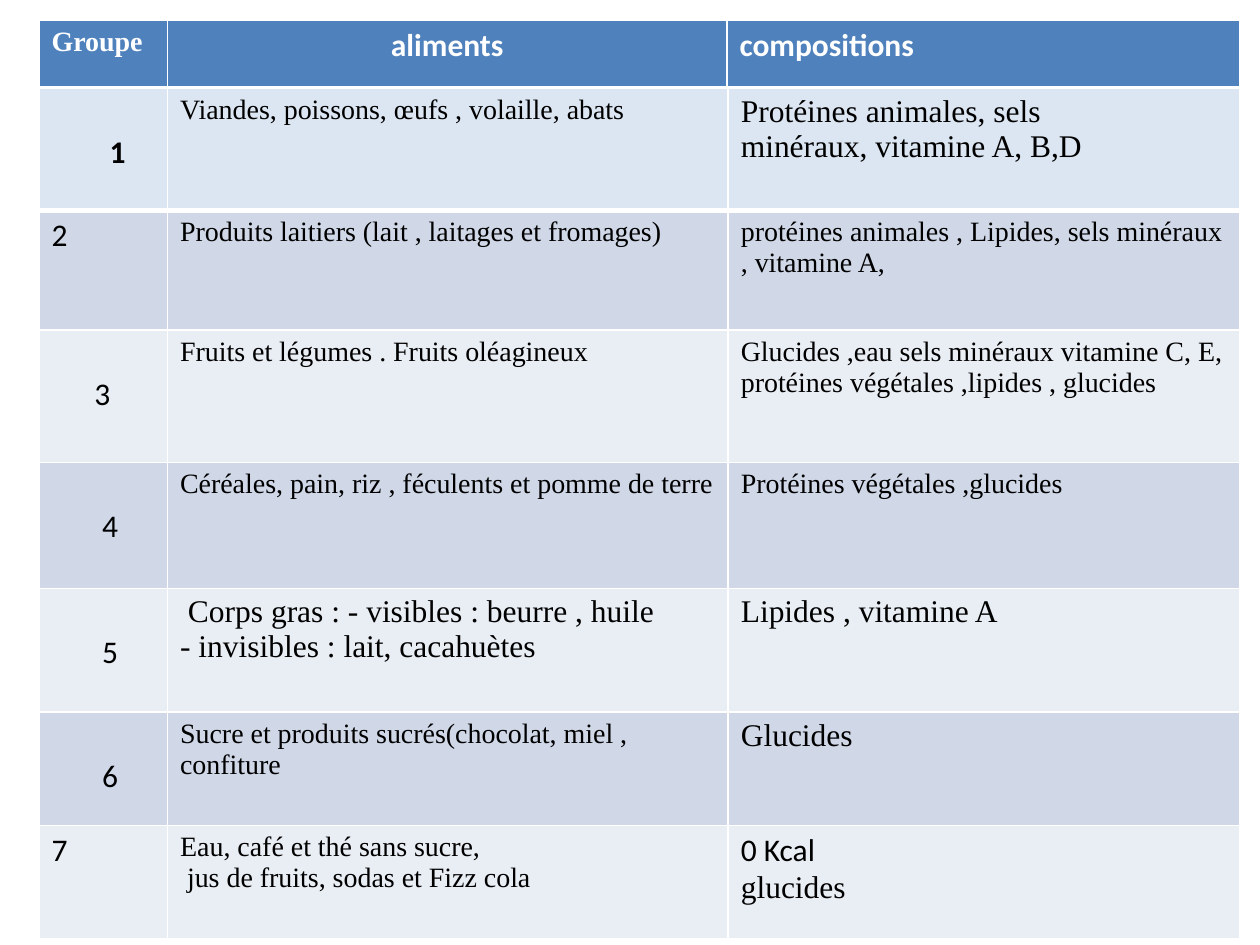
import pptx
import pptx.util
import pptx.dml.color
import pptx.enum.text
from pptx.oxml import parse_xml
from pptx.oxml.ns import nsdecls
from pptx.util import Inches

SERIF, SANS = "Times New Roman", "Calibri"
BLUE, PALE, DARK, LIGHT = "4F81BD", "DCE6F2", "D0D8E8", "E9EDF4"
LEFT = 0.31

# Each row: height, number, number indent, foods, food size, contents, size
ROWS = [
    (0.97, "1", 0.46, ["Viandes, poissons, œufs , volaille, abats"], 16,
     ["Protéines animales, sels", "minéraux, vitamine A, B,D"], 18),
    (0.95, "2", 0, ["Produits laitiers (lait , laitages et fromages)"], 16,
     ["protéines animales , Lipides, sels minéraux , vitamine A,"], 16),
    (1.05, "3", 0.34, ["Fruits et légumes . Fruits oléagineux"], 16,
     ["Glucides ,eau sels minéraux vitamine C, E, "
      "protéines végétales ,lipides , glucides"], 16),
    (1.0, "4", 0.4, ["Céréales, pain, riz , féculents et pomme de terre"], 16,
     ["Protéines végétales ,glucides"], 16),
    (0.98, "5", 0.4, [" Corps gras : - visibles : beurre , huile",
                      "- invisibles : lait, cacahuètes"], 18,
     ["Lipides , vitamine A"], 18),
    (0.9, "6", 0.4, ["Sucre et produits sucrés(chocolat, miel , confiture"], 16,
     ["Glucides"], 18),
    (0.9, "7", 0, ["Eau, café et thé sans sucre,",
                   " jus de fruits, sodas et Fizz cola"], 16,
     ["0 Kcal", "glucides"], 18),
]


def color(code):
    return pptx.dml.color.RGBColor.from_string(code)


def write(par, text, size=18, font=SERIF, tint="000000", bold=False,
          align=pptx.enum.text.PP_ALIGN.LEFT):
    par.alignment = align
    run = par.add_run()
    run.text = text
    run.font.size = pptx.util.Pt(size)
    run.font.name = font
    run.font.bold = bold
    run.font.color.rgb = color(tint)


def lines(cell, texts, **style):
    frame = cell.text_frame
    for i, text in enumerate(texts):
        par = frame.add_paragraph() if i else frame.paragraphs[0]
        write(par, text, **style)


def paint(cell, fill, base=1):
    """White borders, with the bottom one base points wide, and a fill."""
    props = cell._tc.get_or_add_tcPr()
    for side, width in (("L", 1), ("R", 1), ("T", 1), ("B", base)):
        props.append(parse_xml(
            f'<a:ln{side} {nsdecls("a")} w="{pptx.util.Pt(width)}">'
            '<a:solidFill><a:srgbClr val="FFFFFF"/></a:solidFill>'
            f'</a:ln{side}>'))
    cell.fill.solid()
    cell.fill.fore_color.rgb = color(fill)


def grid(slide, top, widths, heights):
    table = slide.shapes.add_table(
        len(heights), len(widths), Inches(LEFT), Inches(top),
        Inches(sum(widths)), Inches(sum(heights))).table
    for col, width in zip(table.columns, widths):
        col.width = Inches(width)
    for row, height in zip(table.rows, heights):
        row.height = Inches(height)
    return table


def header(slide):
    table = grid(slide, 0.16, [1.02, 4.44, 4.07], [0.54])
    group, foods, parts = table.rows[0].cells
    white = dict(tint="FFFFFF", bold=True)
    lines(group, ["Groupe"], size=16, **white)
    lines(foods, ["aliments"], font=SANS,
          align=pptx.enum.text.PP_ALIGN.CENTER, **white)
    lines(parts, ["compositions"], font=SANS, **white)
    for cell in (group, foods, parts):
        paint(cell, BLUE, base=3)


def body(slide):
    table = grid(slide, 0.7, [1.02, 4.45, 4.06], [row[0] for row in ROWS])
    for i, (_, num, indent, foods, small, parts, size) in enumerate(ROWS):
        first = i == 0
        cells = table.rows[i].cells
        lines(cells[0], [num], font=SANS, bold=first)
        if indent:  # an indented number sits one line lower
            cells[0].margin_left = Inches(0.1 + indent)
            cells[0].margin_top = Inches(0.36)
        lines(cells[1], foods, size=small)
        lines(cells[2], parts, size=size)
        fill = PALE if first else DARK if i % 2 else LIGHT
        for cell in cells:
            paint(cell, fill, base=3 if first else 1)
    # The energy value is set in the sans font
    table.cell(6, 2).text_frame.paragraphs[0].runs[0].font.name = SANS


def main():
    deck = pptx.Presentation()
    deck.slide_width, deck.slide_height = Inches(10), Inches(7.5)
    slide = deck.slides.add_slide(deck.slide_layouts[6])
    header(slide)
    body(slide)
    deck.save("out.pptx")


if __name__ == "__main__":
    main()
